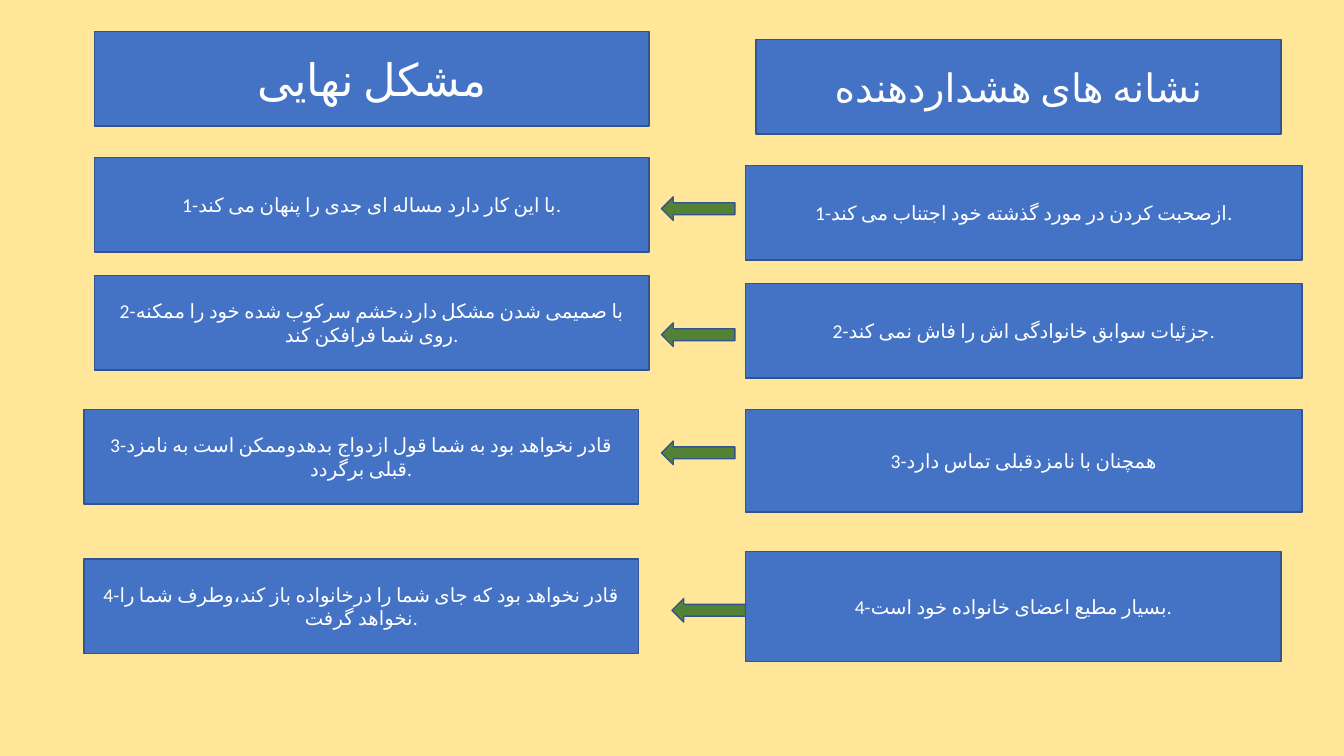
from dataclasses import dataclass

from lxml import etree
from pptx import Presentation
from pptx import util as u
from pptx.dml.color import RGBColor
from pptx.enum import shapes, text
from pptx.oxml import ns

CREAM = RGBColor(0xFF, 0xE6, 0x99)
BLUE = RGBColor(0x44, 0x72, 0xC4)
NAVY = RGBColor(0x32, 0x54, 0x91)
GREEN = RGBColor(0x54, 0x82, 0x35)
WHITE = RGBColor(0xFF, 0xFF, 0xFF)

FONT = "Calibri"
SLIDE_WIDTH, SLIDE_HEIGHT = u.Inches(13.333), u.Inches(7.5)
COLUMN = SLIDE_WIDTH / 128
ROW = SLIDE_HEIGHT / 96
PROBLEM_COLUMNS = 52.8


@dataclass(frozen=True)
class Area:
    column: float
    row: float
    columns: float
    rows: float = 12


@dataclass(frozen=True)
class Card:
    area: Area
    wording: str
    size: int = 14


WARNING_SIGNS = [
    Card(Area(71, 21, 53), "1-ازصحبت کردن در مورد گذشته خود اجتناب می کند."),
    Card(Area(71, 36, 53), "2-جزئیات سوابق خانوادگی اش را فاش نمی کند."),
    Card(Area(71, 52, 53, 13), "3-همچنان با نامزدقبلی تماس دارد"),
    Card(Area(71, 70, 51, 14), "4-بسیار مطیع اعضای خانواده خود است."),
]
FINAL_PROBLEMS = [
    Card(Area(9, 20, PROBLEM_COLUMNS), "1-با این کار دارد مساله ای جدی را پنهان می کند."),
    Card(Area(9, 35, PROBLEM_COLUMNS),
         "2-با صمیمی شدن مشکل دارد،خشم سرکوب شده خود را ممکنه روی شما فرافکن کند."),
    Card(Area(8, 52, PROBLEM_COLUMNS),
         "3-قادر نخواهد بود به شما قول ازدواج بدهدوممکن است به نامزد قبلی برگردد."),
    Card(Area(8, 71, PROBLEM_COLUMNS),
         "4-قادر نخواهد بود که جای شما را درخانواده باز کند،وطرف شما را نخواهد گرفت."),
]
HEADINGS = [
    Card(Area(72, 5, 50), "نشانه های هشداردهنده", 28),
    Card(Area(9, 4, PROBLEM_COLUMNS), "مشکل نهایی", 32),
]
ARROWS = [Area(column, row, 7, 3) for column, row in ((63, 25), (63, 41), (63, 56), (64, 76))]


def draw_shape(slide, kind: shapes.MSO_SHAPE, area: Area, colour: RGBColor):
    shape = slide.shapes.add_shape(
        kind,
        round(area.column * COLUMN),
        round(area.row * ROW),
        round(area.columns * COLUMN),
        round(area.rows * ROW),
    )
    shape.shadow.inherit = False
    shape.fill.solid()
    shape.fill.fore_color.rgb = colour
    shape.line.color.rgb = NAVY
    shape.line.width = u.Pt(1)
    return shape


def draw_card(slide, card: Card) -> None:
    frame = draw_shape(slide, shapes.MSO_SHAPE.RECTANGLE, card.area, BLUE).text_frame
    frame.word_wrap = True
    frame.vertical_anchor = text.MSO_ANCHOR.MIDDLE
    paragraph = frame.paragraphs[0]
    paragraph.alignment = text.PP_ALIGN.CENTER
    run = paragraph.add_run()
    run.text = card.wording
    run.font.name = FONT
    run.font.size = u.Pt(card.size)
    run.font.color.rgb = WHITE
    properties = run._r.get_or_add_rPr()
    properties.set("lang", "fa-IR")
    etree.SubElement(properties, ns.qn("a:cs"), typeface=FONT)


def main() -> None:
    presentation = Presentation()
    presentation.slide_width = SLIDE_WIDTH
    presentation.slide_height = SLIDE_HEIGHT
    slide = presentation.slides.add_slide(presentation.slide_layouts[6])
    slide.background.fill.solid()
    slide.background.fill.fore_color.rgb = CREAM
    for card in WARNING_SIGNS + FINAL_PROBLEMS + HEADINGS:
        draw_card(slide, card)
    for arrow in ARROWS:
        draw_shape(slide, shapes.MSO_SHAPE.LEFT_ARROW, arrow, GREEN)
    presentation.save("out.pptx")


if __name__ == "__main__":
    main()
